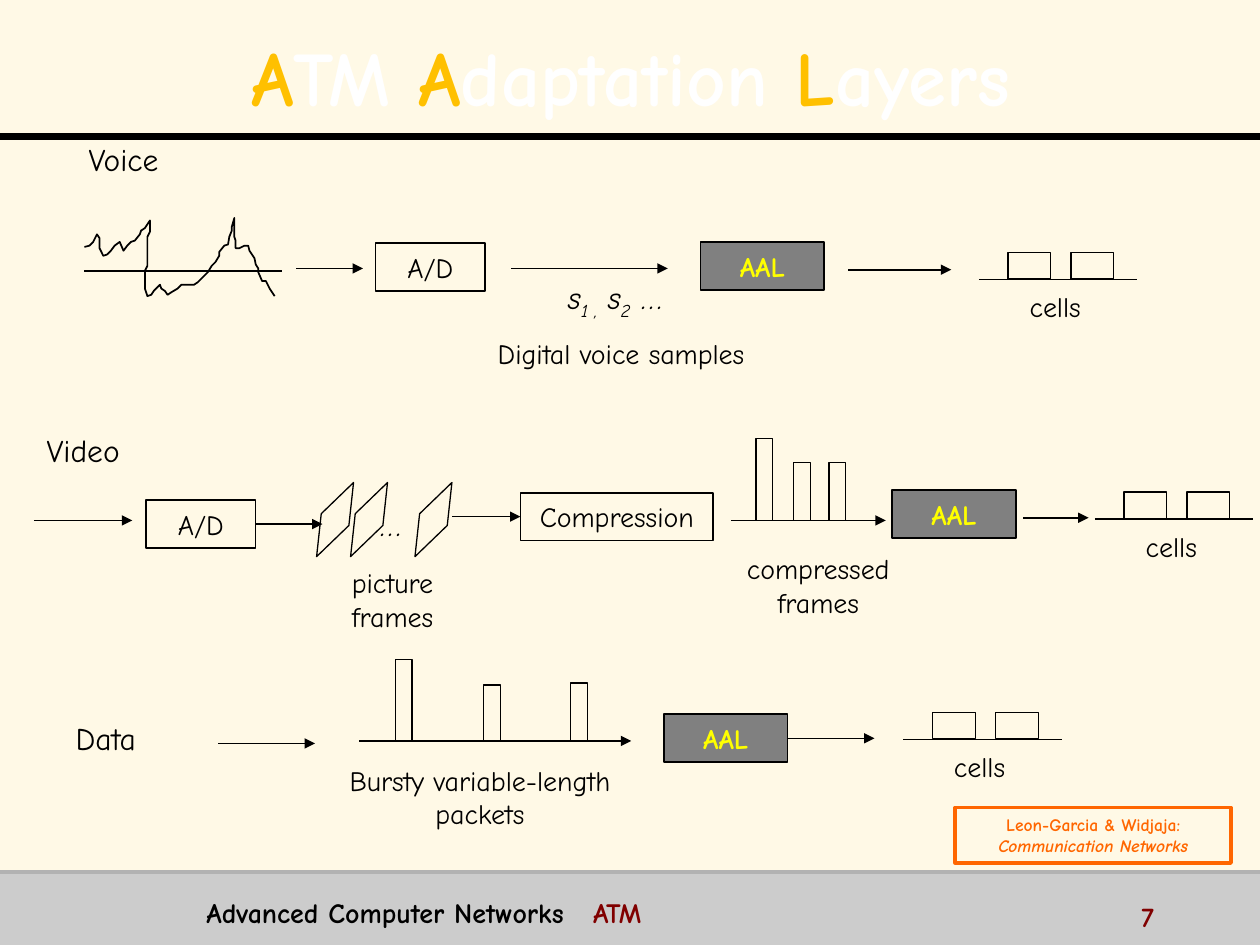
import pptx
import pptx.dml.color
import pptx.enum.shapes
import pptx.enum.text
import pptx.oxml.ns
import pptx.util
from lxml import etree

Pt = pptx.util.Pt
RGB = pptx.dml.color.RGBColor.from_string
qn = pptx.oxml.ns.qn
ALIGN = pptx.enum.text.PP_ALIGN
ANCHOR = pptx.enum.text.MSO_ANCHOR
SHAPES = pptx.enum.shapes.MSO_SHAPE


class Theme:
    font = "Comic Neue"
    paper, ink, white = RGB("FFF9E6"), RGB("000000"), RGB("FFFFFF")
    footer, footer_edge = RGB("CCCCCC"), RGB("B2B2B2")
    layer, layer_text = RGB("808080"), RGB("FFFF00")
    gold, orange, maroon = RGB("FFC000"), RGB("FF6600"), RGB("800000")
    title, heading, body, citation = 44, 18, 16, 10
    thin, normal = 0.75, 1


prs = pptx.Presentation()
prs.slide_width, prs.slide_height = Pt(720), Pt(540)
slide = prs.slides.add_slide(prs.slide_layouts[6])
slide.background.fill.solid()
slide.background.fill.fore_color.rgb = Theme.paper


def block(left, top, width, height, text="", size=Theme.body, color=Theme.ink, bold=False,
          align=ALIGN.CENTER, kind=None, fill=None, edge=Theme.ink, weight=Theme.normal, tab=None):
    """Add a preset shape, or a text box when no kind is given."""
    frame = [Pt(v) for v in (left, top, width, height)]
    if kind is None:
        shape = slide.shapes.add_textbox(*frame)
    else:
        shape = slide.shapes.add_shape(kind, *frame)
        shape.shadow.inherit = False
        if fill is None:
            shape.fill.background()
        else:
            shape.fill.solid()
            shape.fill.fore_color.rgb = fill
        if edge is None:
            shape.line.fill.background()
        else:
            shape.line.color.rgb, shape.line.width = edge, Pt(weight)
    shape.text_frame.word_wrap = True
    shape.text_frame.text = text
    for paragraph in shape.text_frame.paragraphs:
        paragraph.alignment = align
        if tab:
            stops = etree.SubElement(paragraph._p.get_or_add_pPr(), qn("a:tabLst"))
            etree.SubElement(stops, qn("a:tab"), pos=str(Pt(tab)), algn="l")
        font = paragraph.font
        font.name, font.size, font.bold = Theme.font, Pt(size), bold
        font.color.rgb = color
    return shape


def line(x1, y1, x2, y2, weight=Theme.normal, color=Theme.ink, arrow=False):
    connector = slide.shapes.add_connector(
        pptx.enum.shapes.MSO_CONNECTOR.STRAIGHT, Pt(x1), Pt(y1), Pt(x2), Pt(y2))
    connector.line.color.rgb, connector.line.width = color, Pt(weight)
    if arrow:
        etree.SubElement(connector.line._get_or_add_ln(), qn("a:tailEnd"), type="triangle")
    etree.SubElement(connector._element.spPr, qn("a:effectLst"))
    return connector


# Slide frame
block(0, 498.2, 720, 41.8, kind=SHAPES.RECTANGLE, fill=Theme.footer, edge=None)
line(0, 77.8, 720, 77.8, 4)
line(0, 498.2, 720, 498.2, 2, Theme.footer_edge)

# Voice waveform, in hundredths of an inch
wave = [
    (67, 196), (71, 195), (74, 192), (77, 186), (79, 189), (79, 197), (82, 203), (85, 202),
    (88, 199), (91, 195), (95, 192), (98, 199), (101, 195), (104, 192), (107, 191), (111, 186),
    (112, 183), (115, 181), (119, 175), (119, 184), (117, 188), (117, 211), (115, 215),
    (115, 229), (117, 235), (120, 234), (122, 231), (127, 226), (128, 229), (131, 231),
    (133, 234), (136, 232), (141, 229), (144, 226), (154, 226), (157, 224), (160, 221),
    (165, 216), (168, 211), (171, 208), (174, 203), (174, 200), (178, 195), (181, 194),
    (182, 188), (184, 183), (184, 180), (186, 173), (186, 188), (187, 191), (187, 197),
    (190, 197), (194, 195), (197, 195), (198, 199), (202, 205), (203, 210), (205, 213),
    (205, 216), (208, 223), (211, 223), (214, 229), (216, 232), (218, 235),
]
outline = slide.shapes.build_freeform(*wave[0], scale=Pt(0.72))
outline.add_line_segments(wave[1:], close=False)
waveform = outline.convert_to_shape()
waveform.shadow.inherit = False
waveform.fill.background()
waveform.line.color.rgb, waveform.line.width = Theme.ink, Pt(Theme.normal)
line(48.2, 154.8, 161.3, 154.8, Theme.thin)

# Processing stages
stage_height = 27.4
stages = {}
for name, text, left, top, width in [
    ("voice A/D", "A/D", 214.6, 139, 62.6),
    ("video A/D", "A/D", 83.5, 285.8, 62.6),
    ("compression", "Compression", 297.4, 281.5, 110.2),
]:
    stages[name] = block(left, top, width, stage_height, text, kind=SHAPES.RECTANGLE)
for name, left, top in [("voice AAL", 400.3, 138.2), ("video AAL", 509.8, 280.1),
                        ("data AAL", 379.4, 408.2)]:
    stages[name] = block(left, top, 70.6, stage_height, "AAL", color=Theme.layer_text,
                         bold=True, kind=SHAPES.RECTANGLE, fill=Theme.layer)

# Flow arrows
for x1, x2, y in [(169.2, 207.4, 153.4), (292.3, 381.6, 153.4), (484.6, 543.6, 154.1),
                  (19.4, 75.6, 297.4), (584.6, 622.1, 295.9), (124.6, 180, 424.8)]:
    line(x1, y, x2, y, arrow=True)
line(146.1, 299.5, 184.3, 299.5, arrow=True).begin_connect(stages["video A/D"], 3)
line(258.5, 295.2, 297.4, 295.2, arrow=True).end_connect(stages["compression"], 1)
line(450, 421.9, 499.7, 421.9, Theme.thin, arrow=True).begin_connect(stages["data AAL"], 3)

# Picture frames
for left in (169.2, 188.6, 225.4):
    picture_frame = block(left, 289, 44.6, 15.8, kind=SHAPES.PARALLELOGRAM, weight=Theme.thin)
    picture_frame.adjustments[0] = 1.2
    picture_frame.rotation = 316
more_frames = block(208.8, 285.1, 30.2, 28.8, "…", Theme.heading)
more_frames.text_frame.word_wrap = False
more_frames.text_frame.vertical_anchor = ANCHOR.MIDDLE
more_frames.text_frame.paragraphs[0].font.italic = True

# Bursts of varying length standing on a time axis
for start, end, axis, bursts in [
    (417.6, 506.2, 297.4, [(432, 46.8), (453.6, 33), (473.8, 33)]),
    (205.2, 360.7, 423.4, [(226.1, 46.5), (276.5, 32), (326.2, 33)]),
]:
    line(start, axis, end, axis, arrow=True)
    for left, height in bursts:
        block(left, axis - height, 9.4, height, kind=SHAPES.RECTANGLE, weight=Theme.thin)

# Outgoing cells
for left, axis in [(559.4, 159.8), (516.2, 422.6), (625.7, 296.6)]:
    line(left, axis, left + 90.4, axis, Theme.thin)
    for offset in (16.6, 52.6):
        block(left + offset, axis - 15.5, 24.5, 15.1, kind=SHAPES.RECTANGLE, weight=Theme.thin)
    block(left + 17.3, axis + 2.2, 52.6, 26.6, "cells")

# Labels
for text, left, top in [("Voice", 38.2, 76.3), ("Video", 15.1, 242.6), ("Data", 28.1, 407.5)]:
    block(left, top, 64.8, 28.8, text, Theme.heading)
for text, left, top, width, height in [
    ("Digital voice samples", 270, 188.6, 169.9, 26.6),
    ("compressed frames", 411.8, 311.8, 111.6, 46.1),
    ("picture frames", 168.5, 319.7, 111.6, 46.1),
    ("Bursty variable-length packets", 182.9, 432.7, 182.9, 46.1),
]:
    block(left, top, width, height, text)

samples = block(295.9, 155.5, 112.3, 28.8, size=Theme.heading).text_frame.paragraphs[0]
samples.font.italic = True
for text, subscript in [("s", False), ("1 ,", True), (" s", False), ("2", True), (" …", False)]:
    run = samples.add_run()
    run.text = text
    if subscript:
        run.font._element.set("baseline", "-25000")

citation = block(545.8, 461.5, 157.7, 31.7, "Leon-Garcia & Widjaja:\nCommunication Networks",
                 Theme.citation, Theme.orange, True, kind=SHAPES.RECTANGLE,
                 edge=Theme.orange, weight=2)
citation.text_frame.paragraphs[1].font.italic = True

# Title with shadowed letters
title = block(14.4, 9.4, 691.9, 62.6, size=Theme.title, color=Theme.white, bold=True)
title.text_frame.vertical_anchor = ANCHOR.MIDDLE
heading = title.text_frame.paragraphs[0]
heading.line_spacing = 1.1
for text, color in [("A", Theme.gold), ("TM ", Theme.white), ("A", Theme.gold),
                    ("daptation", Theme.white), (" L", Theme.gold), ("ayers", Theme.white)]:
    run = heading.add_run()
    run.text = text
    run.font.color.rgb = color
    effects = etree.SubElement(run.font._element, qn("a:effectLst"))
    shadow = etree.SubElement(effects, qn("a:outerShdw"), dist=str(Pt(2)), dir="2700000")
    etree.SubElement(shadow, qn("a:srgbClr"), val=str(Theme.ink))

# Footer
course = block(110.9, 508.3, 524.2, 22.3, "Advanced Computer Networks\t", bold=True,
               align=ALIGN.LEFT, tab=221)
topic = course.text_frame.paragraphs[0].add_run()
topic.text = "ATM"
topic.font.color.rgb = Theme.maroon
block(645.1, 510.5, 72, 18, "7", color=Theme.maroon, bold=True, align=ALIGN.LEFT)

prs.save("out.pptx")
